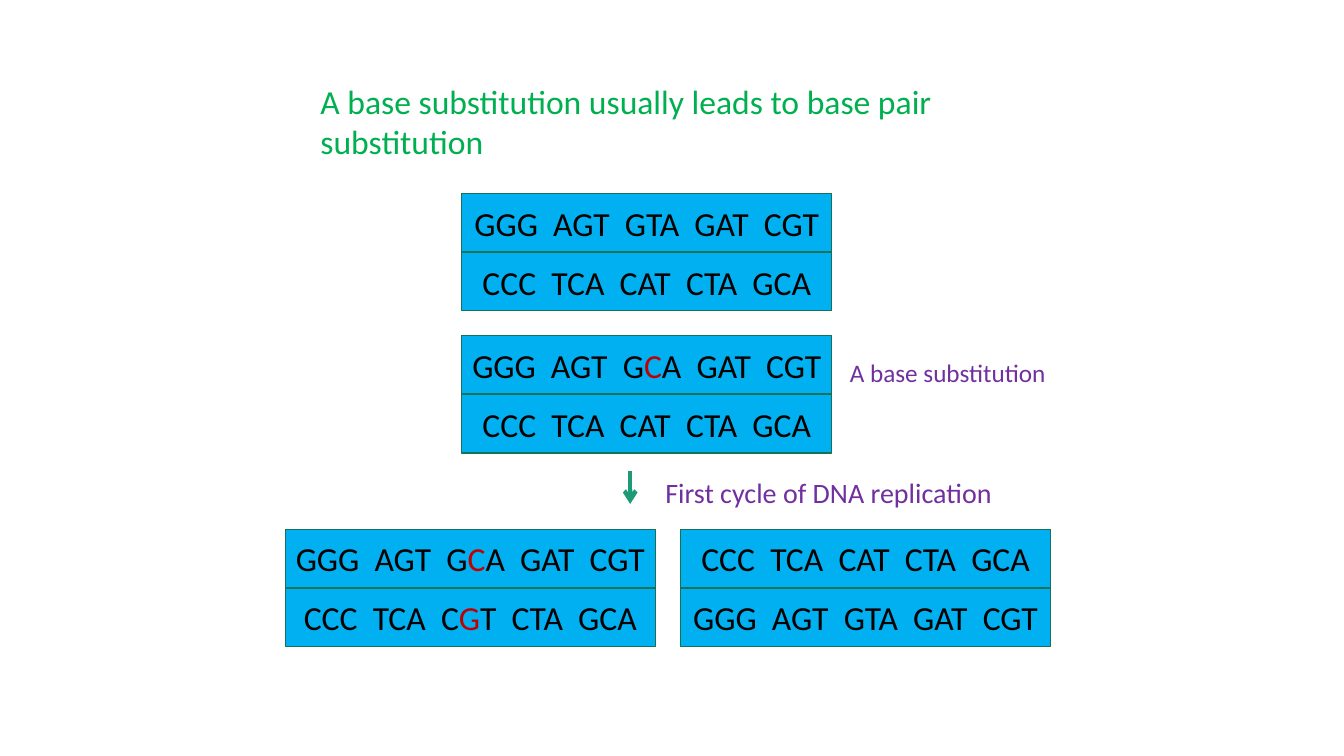
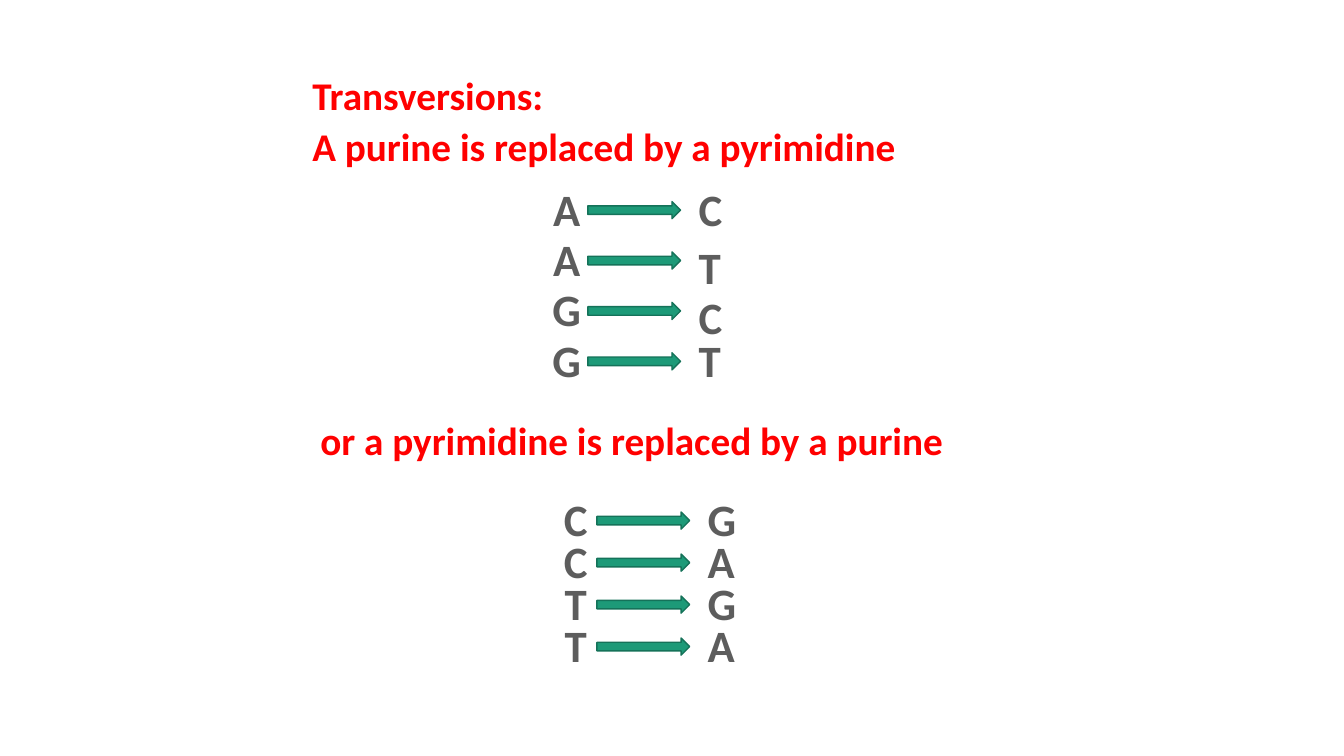
from lxml import etree
from pptx import Presentation
from pptx.dml.color import RGBColor
from pptx.enum.shapes import MSO_CONNECTOR, MSO_SHAPE
from pptx.enum.text import MSO_ANCHOR, PP_ALIGN
from pptx.oxml.ns import qn
from pptx.util import Inches, Pt

RECTANGLE, RIGHT_ARROW = MSO_SHAPE.RECTANGLE, MSO_SHAPE.RIGHT_ARROW
STRAIGHT = MSO_CONNECTOR.STRAIGHT
MIDDLE = MSO_ANCHOR.MIDDLE
LEFT, CENTER, JUSTIFY = PP_ALIGN.LEFT, PP_ALIGN.CENTER, PP_ALIGN.JUSTIFY

FONT = "Calibri"
BLACK = RGBColor(0x00, 0x00, 0x00)
GREEN = RGBColor(0x00, 0xB0, 0x50)
PURPLE = RGBColor(0x70, 0x30, 0xA0)
RED = RGBColor(0xFF, 0x00, 0x00)
DARK_RED = RGBColor(0xC0, 0x00, 0x00)
GRAY = RGBColor(0x5D, 0x5D, 0x5D)
SKY = RGBColor(0x00, 0xB0, 0xF0)
TEAL = RGBColor(0x1D, 0x9A, 0x78)
DARK_TEAL = RGBColor(0x15, 0x72, 0x59)

STRAND_WIDTH, STRAND_HEIGHT = 3.67, 0.58
STRAND_PITCH = 7 / 12


def style(paragraph, size, color, bold=False, align=LEFT):
    font = paragraph.font
    font.name, font.size, font.bold = FONT, Pt(size), bold
    font.color.rgb = color
    paragraph.alignment = align


def add_text(page, left, top, width, height, lines, size, color,
             bold=False, align=LEFT, space_after=0):
    box = page.shapes.add_textbox(
        Inches(left), Inches(top), Inches(width), Inches(height))
    frame = box.text_frame
    frame.word_wrap = True
    frame.text = "\n".join(lines)
    for para in frame.paragraphs:
        style(para, size, color, bold, align)
        para.space_after = Pt(space_after)


def add_block(page, kind, left, top, width, height, fill):
    block = page.shapes.add_shape(
        kind, Inches(left), Inches(top), Inches(width), Inches(height))
    block.shadow.inherit = False
    block.fill.solid()
    block.fill.fore_color.rgb = fill
    block.line.color.rgb = DARK_TEAL
    block.line.width = Pt(1)
    return block


def add_strand(page, left, top, codons):
    """Draw one DNA strand; a base between asterisks is a mutated one."""
    strand = add_block(page, RECTANGLE, left, top,
                       STRAND_WIDTH, STRAND_HEIGHT, SKY)
    frame = strand.text_frame
    frame.word_wrap = False
    frame.vertical_anchor = MIDDLE
    para = frame.paragraphs[0]
    style(para, 24, BLACK, align=CENTER)
    for index, part in enumerate("  ".join(codons.split()).split("*")):
        span = para.add_run()
        span.text = part
        if index % 2:
            span.font.color.rgb = DARK_RED


def add_helix(page, left, top, upper, lower):
    for row, codons in enumerate((upper, lower)):
        add_strand(page, left, top + row * STRAND_PITCH, codons)


def add_down_arrow(page, x, top, bottom):
    arrow = page.shapes.add_connector(
        STRAIGHT, Inches(x), Inches(top), Inches(x), Inches(bottom))
    arrow.line.color.rgb = TEAL
    arrow.line.width = Pt(3)
    outline = arrow.line._get_or_add_ln()
    etree.SubElement(outline, qn("a:tailEnd"), type="arrow")
    etree.SubElement(arrow._element.spPr, qn("a:effectLst"))


def add_replacements(page, left, top, pitch, pairs):
    """Draw rows of base, arrow, new base; drop lowers the new base."""
    for row, (old, new, drop) in enumerate(pairs):
        y = top + row * pitch
        for base, x, base_top, width in ((old, left, y, 0.58),
                                         (new, left + 1.5, y + drop, 0.33)):
            add_text(page, x, base_top, width, 0.64, [base], 32, GRAY,
                     bold=True, align=CENTER)
        add_block(page, RIGHT_ARROW, left + 0.5, y + 0.25, 0.92, 0.17, TEAL)


def build_substitution(page):
    add_text(page, 3.08, 0.75, 6.75, 0.91,
             ["A base substitution usually leads to base pair substitution"],
             24, GREEN)
    normal, complement = "GGG AGT GTA GAT CGT", "CCC TCA CAT CTA GCA"
    mutated = "GGG AGT G*C*A GAT CGT"
    add_helix(page, 4.58, 1.92, normal, complement)
    add_helix(page, 4.58, 3.33, mutated, complement)
    add_text(page, 8.33, 3.5, 2.62, 0.4, ["A base substitution"], 18, PURPLE)
    add_down_arrow(page, 6.25, 4.67, 5)
    add_text(page, 6.5, 4.67, 3.6, 0.44,
             ["First cycle of DNA replication"], 20, PURPLE)
    add_helix(page, 2.83, 5.25, mutated, "CCC TCA C*G*T CTA GCA")
    add_helix(page, 6.75, 5.25, complement, normal)


def build_transversions(page):
    add_text(page, 3, 0.66, 7.5, 1.09,
             ["Transversions:", "A purine is replaced by a pyrimidine"],
             28, RED, bold=True, align=JUSTIFY, space_after=3)
    add_replacements(page, 5.33, 1.75, 0.5,
                     [("A", "C", 0), ("A", "T", 0.08),
                      ("G", "C", 0.08), ("G", "T", 0)])
    add_text(page, 3.08, 4.08, 6.6, 0.57,
             ["or a pyrimidine is replaced by a purine"],
             28, RED, bold=True, align=JUSTIFY)
    add_replacements(page, 5.42, 4.83, 5 / 12,
                     [("C", "G", 0), ("C", "A", 0),
                      ("T", "G", 0), ("T", "A", 0)])


def main():
    deck = Presentation()
    deck.slide_width, deck.slide_height = Inches(13.33), Inches(7.5)
    blank = deck.slide_layouts[6]
    for build in (build_substitution, build_transversions):
        build(deck.slides.add_slide(blank))
    deck.save("out.pptx")


if __name__ == "__main__":
    main()
